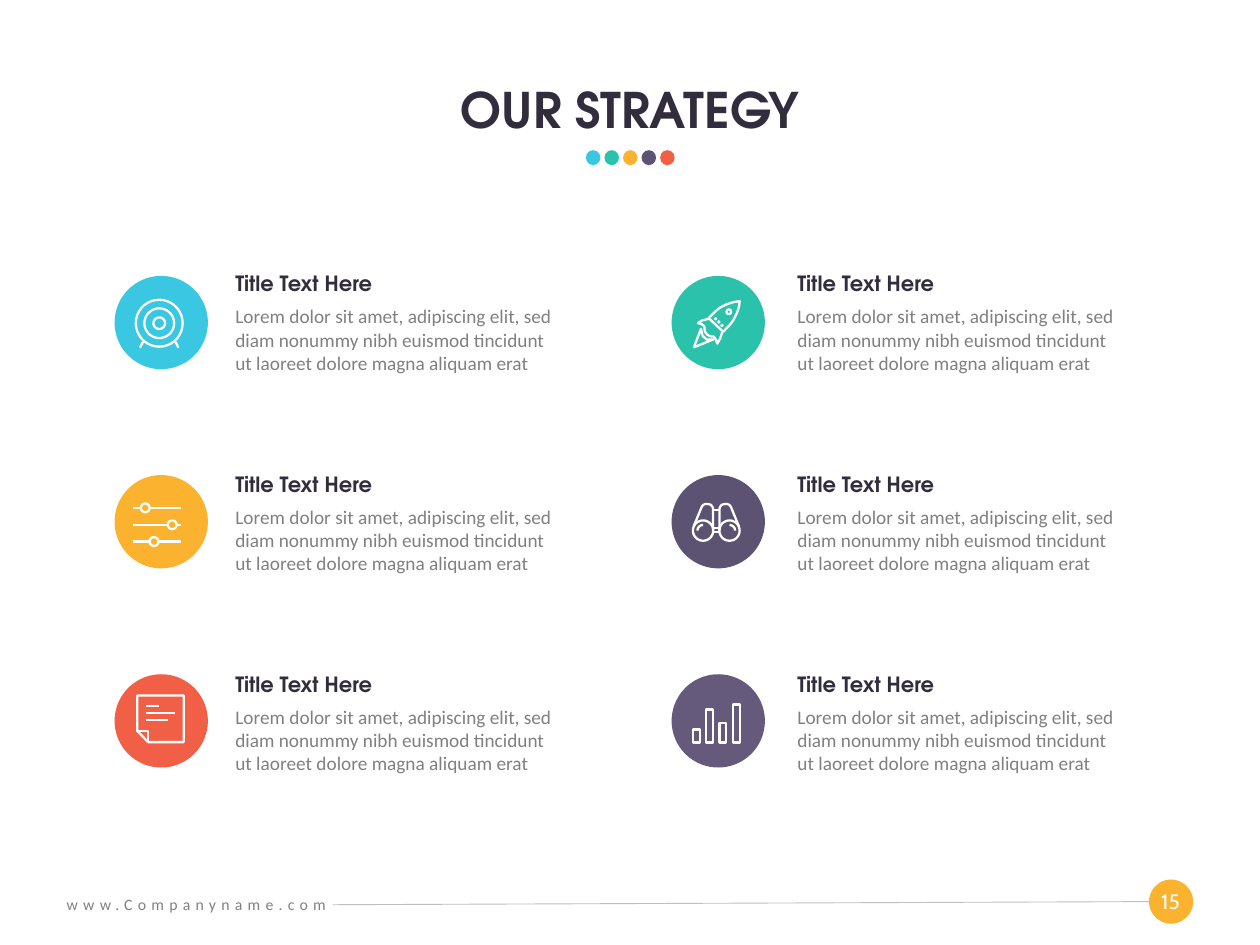
import math
from dataclasses import dataclass

from lxml import etree
from pptx import Presentation
from pptx import util as u
from pptx.dml.color import RGBColor
from pptx.enum import shapes, text
from pptx.oxml.ns import qn

Point = tuple[float, float]
Contour = list[Point]


@dataclass(frozen=True)
class Theme:
    sky: str = "3AC7E2"
    teal: str = "2BC2AC"
    amber: str = "FBB22F"
    plum: str = "5C5271"
    coral: str = "F15F47"
    violet: str = "655A7C"
    ink: str = "322D3D"
    grey: str = "808080"
    rule: str = "BFBFBF"
    white: str = "FFFFFF"
    heading_font: str = "TeX Gyre Adventor"
    body_font: str = "Calibri"
    number_font: str = "Cabin"
    title_size: float = 28
    heading_size: float = 12
    body_size: float = 11
    footer_size: float = 9
    icon_stroke: float = 1.3


@dataclass(frozen=True)
class Style:
    font: str
    size: float
    color: str
    bold: bool = False
    align: text.PP_ALIGN = text.PP_ALIGN.LEFT


@dataclass(frozen=True)
class Box:
    left: float
    top: float
    width: float
    height: float

    def lengths(self) -> list[u.Length]:
        return [u.Pt(value) for value in (self.left, self.top, self.width, self.height)]


@dataclass(frozen=True)
class Icon:
    offset: Point
    contours: list[Contour]


@dataclass(frozen=True)
class Strategy:
    column: int
    row: int
    color: str
    icon: Icon


THEME = Theme()
HEADING = "Title Text Here"
BODY = ("Lorem dolor sit amet, adipiscing elit, sed diam nonummy nibh euismod "
        "tincidunt ut laoreet dolore magna aliquam erat")


def arc(x: float, y: float, radius: float, start: int = 0, end: int = 360) -> Contour:
    return [(x + radius * math.cos(math.radians(angle)), y + radius * math.sin(math.radians(angle)))
            for angle in range(start, end + 1, 10)]


def mirrored(contours: list[Contour], axis: float) -> list[Contour]:
    return contours + [[(2 * axis - x, y) for x, y in contour] for contour in contours]


def bar(left: float, top: float, width: float, bottom: float) -> Contour:
    right = left + width
    return [(left, top), (right, top), (right, bottom), (left, bottom), (left, top)]


def target_icon() -> Icon:
    rings = [arc(14, 14, radius) for radius in (13.4, 8.5, 3.3)]
    return Icon((11.5, 13), rings + mirrored([[(4.7, 24.7), (3, 28)]], 14))


def slider_icon() -> Icon:
    contours = []
    for knob, y in ((7.4, 2.9), (22.8, 12.6), (12.4, 22.2)):
        contours += [[(0.6, y), (knob - 2.5, y)], arc(knob, y, 2.5), [(knob + 2.5, y), (27.6, y)]]
    return Icon((10.1, 15.8), contours)


def note_icon() -> Icon:
    sheet = [(0.7, 0.7), (27.3, 0.7), (27.3, 27.3), (7, 27.3), (0.7, 20.9), (0.7, 0.7)]
    fold = [(0.7, 20.9), (7, 20.9), (7, 27.3)]
    lines = [[(5.7, y), (end, y)] for end, y in ((13.4, 6.8), (22.4, 10.6), (18.6, 14.5))]
    return Icon((12.2, 11.5), [sheet, fold] + lines)


def binoculars_icon() -> Icon:
    barrel = [(1.1, 13.5), (5.8, 2.2), (6.6, 1.2), (7.8, 0.7), (9.4, 0.7),
              (11, 1.2), (12, 2.5), (12.2, 3.5), (12.2, 15.9)]
    side = [barrel, arc(6.5, 15.9, 5.8), arc(6.5, 15.9, 3.2, 180, 270)]
    bridges = [[(12.2, y), (15.9, y)] for y in (4.3, 14.4, 16.6)]
    return Icon((11.5, 15.8), mirrored(side, 14.05) + bridges)


def bars_icon() -> Icon:
    tops = (15, 3.5, 11.2, 0.7)
    return Icon((11.5, 16.6), [bar(0.7 + 7.6 * index, top, 3.9, 22.4) for index, top in enumerate(tops)])


def rocket_icon() -> Icon:
    body = [(27.4, 0.7), (24, 1.2), (20, 2.5), (16.5, 4.2), (14, 6.1), (9.7, 10.4), (18, 18.2),
            (22, 14), (24, 11.2), (26, 7.2), (27.1, 3.5), (27.4, 0.7)]
    fins = [(9.7, 10.8), (6, 11.7), (3.5, 13.2), (5.8, 13.9), (7.2, 15), (7.5, 18), (8.7, 19.7),
            (10.5, 20.8), (12.6, 21), (13.8, 22.7), (14.6, 25), (16.3, 22), (17.4, 18.5)]
    flame = [(5.3, 16.5), (1.2, 27.1), (12.3, 22.6), (8.6, 22.6), (6.2, 20.6), (5.3, 16.5)]
    rivets = [arc(x, y, 0.25) for x, y in ((13.7, 10.8), (15.5, 12.6), (17.3, 14.6))]
    return Icon((11.5, 13.7), [body, fins, flame, arc(21.2, 6.8, 1.3)] + rivets)


def add_filled(parent, kind: shapes.MSO_SHAPE, box: Box, color: str):
    shape = parent.add_shape(kind, *box.lengths())
    shape.shadow.inherit = False
    shape.fill.solid()
    shape.fill.fore_color.rgb = RGBColor.from_string(color)
    shape.line.fill.background()
    return shape


def add_text(slide, box: Box, words: str, style: Style, wrap: bool = True):
    shape = slide.shapes.add_textbox(*box.lengths())
    frame = shape.text_frame
    frame.word_wrap = wrap
    frame.auto_size = text.MSO_AUTO_SIZE.SHAPE_TO_FIT_TEXT
    paragraph = frame.paragraphs[0]
    paragraph.text = words
    paragraph.alignment = style.align
    paragraph.font.name = style.font
    paragraph.font.size = u.Pt(style.size)
    paragraph.font.bold = style.bold
    paragraph.font.color.rgb = RGBColor.from_string(style.color)
    return shape


def add_icon(slide, left: float, top: float, icon: Icon) -> None:
    points = [[(u.Pt(x), u.Pt(y)) for x, y in contour] for contour in icon.contours]
    builder = slide.shapes.build_freeform(*points[0][0])
    for index, contour in enumerate(points):
        if index:
            builder.move_to(*contour[0])
        builder.add_line_segments(contour[1:], close=contour[0] == contour[-1])
    shape = builder.convert_to_shape(u.Pt(left + icon.offset[0]), u.Pt(top + icon.offset[1]))
    shape.shadow.inherit = False
    shape.fill.background()
    shape.line.color.rgb = RGBColor.from_string(THEME.white)
    shape.line.width = u.Pt(THEME.icon_stroke)


def add_strategy(slide, strategy: Strategy) -> None:
    left, top = 65.5 + 318.3 * strategy.column, 157.7 + 113.8 * strategy.row
    add_filled(slide.shapes, shapes.MSO_SHAPE.OVAL, Box(left, top, 53.3, 53.3), strategy.color)
    add_icon(slide, left, top, strategy.icon)
    text_left, text_top = 127.4 + 321.2 * strategy.column, 151.2 + 114.5 * strategy.row
    add_text(slide, Box(text_left, text_top + 19.4, 197.3, 47.5), BODY,
             Style(THEME.body_font, THEME.body_size, THEME.grey))
    add_text(slide, Box(text_left, text_top, 146.9, 21.6), HEADING,
             Style(THEME.heading_font, THEME.heading_size, THEME.ink, True))


def add_header(slide) -> None:
    title = add_text(slide, Box(0, 20.2, 720, 62.6), "OUR STRATEGY",
                     Style(THEME.heading_font, THEME.title_size, THEME.ink, True, text.PP_ALIGN.CENTER))
    title.text_frame.auto_size = text.MSO_AUTO_SIZE.NONE
    title.text_frame.vertical_anchor = text.MSO_ANCHOR.BOTTOM
    title.text_frame.paragraphs[0].line_spacing = 0.9
    dots = slide.shapes.add_group_shape()
    for index, color in enumerate((THEME.sky, THEME.teal, THEME.amber, THEME.plum, THEME.coral)):
        add_filled(dots.shapes, shapes.MSO_SHAPE.OVAL, Box(334.8 + 10.6 * index, 85.8, 8.3, 8.6), color)


def add_footer(slide) -> None:
    badge = add_filled(slide.shapes, shapes.MSO_SHAPE.ROUNDED_RECTANGLE,
                       Box(656.6, 502.6, 25.2, 25.2), THEME.amber)
    badge.adjustments[0] = 0.5
    add_text(slide, Box(655.2, 504, 27.4, 21.6), "15",
             Style(THEME.number_font, 12, THEME.white, align=text.PP_ALIGN.CENTER), wrap=False)
    rule = slide.shapes.add_connector(shapes.MSO_CONNECTOR.STRAIGHT,
                                      u.Pt(190.1), u.Pt(517), u.Pt(656.6), u.Pt(515.2))
    rule.end_connect(badge, 1)
    rule.line.color.rgb = RGBColor.from_string(THEME.rule)
    rule.line.width = u.Pt(0.5)
    etree.SubElement(rule._element.spPr, qn("a:effectLst"))
    address = add_text(slide, Box(31, 507.6, 230.4, 18), "www.Companyname.com",
                       Style(THEME.body_font, THEME.footer_size, THEME.grey))
    address.text_frame.paragraphs[0].runs[0]._r.get_or_add_rPr().set("spc", "300")


def main() -> None:
    presentation = Presentation()
    presentation.slide_width, presentation.slide_height = u.Pt(720), u.Pt(540)
    slide = presentation.slides.add_slide(presentation.slide_layouts[6])
    add_footer(slide)
    add_header(slide)
    for strategy in (
        Strategy(0, 0, THEME.sky, target_icon()),
        Strategy(1, 0, THEME.teal, rocket_icon()),
        Strategy(0, 1, THEME.amber, slider_icon()),
        Strategy(1, 1, THEME.plum, binoculars_icon()),
        Strategy(0, 2, THEME.coral, note_icon()),
        Strategy(1, 2, THEME.violet, bars_icon()),
    ):
        add_strategy(slide, strategy)
    presentation.save("out.pptx")


if __name__ == "__main__":
    main()
